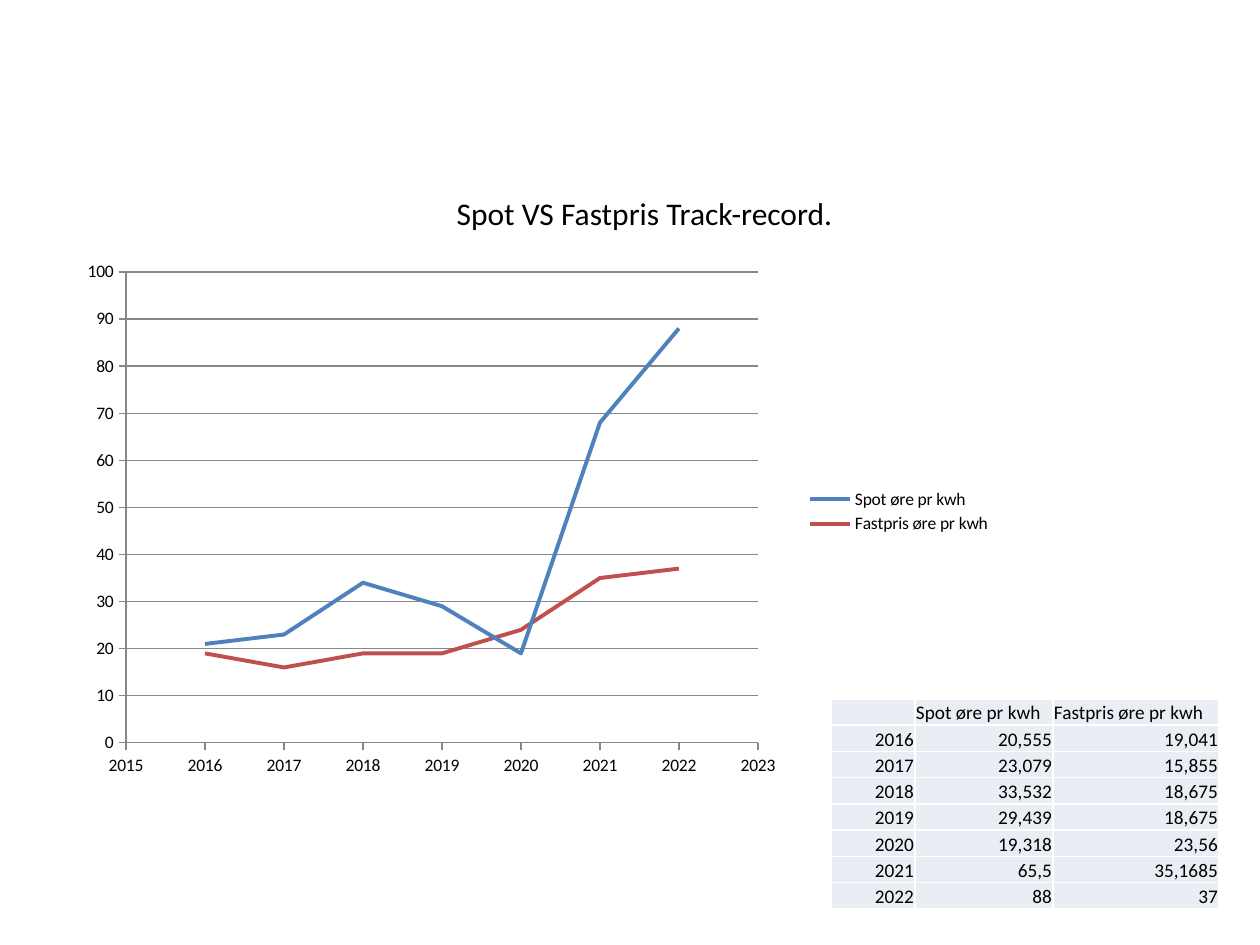
import pptx
import pptx.chart.data
import pptx.dml.color
import pptx.enum.chart
import pptx.enum.text
import pptx.oxml
import pptx.oxml.ns
import pptx.util

PX = pptx.util.Inches(1) / 126
FONT = "Calibri"
BLACK, WHITE, GRID, CELL = "000000", "FFFFFF", "878787", "E9EDF4"
LEFT = pptx.enum.text.PP_ALIGN.LEFT
RIGHT = pptx.enum.text.PP_ALIGN.RIGHT
CENTER = pptx.enum.text.PP_ALIGN.CENTER

HEADINGS = ["", "Spot øre pr kwh", "Fastpris øre pr kwh"]
PRICES = [
    ["2016", "20,555", "19,041"],
    ["2017", "23,079", "15,855"],
    ["2018", "33,532", "18,675"],
    ["2019", "29,439", "18,675"],
    ["2020", "19,318", "23,56"],
    ["2021", "65,5", "35,1685"],
    ["2022", "88", "37"],
]
YEARS = range(2016, 2023)
SERIES = [
    (HEADINGS[1], "4F81BD", [21, 23, 34, 29, 19, 68, 88]),
    (HEADINGS[2], "C0504D", [19, 16, 19, 19, 24, 35, 37]),
]


def px(length):
    return pptx.util.Emu(round(length * PX))


def color(code):
    return pptx.dml.color.RGBColor.from_string(code)


def set_font(font, size, code=BLACK):
    font.name = FONT
    font.size = pptx.util.Pt(size)
    font.color.rgb = color(code)


def set_line(line, code, width):
    line.color.rgb = color(code)
    line.width = pptx.util.Pt(width)


def write_text(frame, text, size=11, align=LEFT):
    para = frame.paragraphs[0]
    para.alignment = align
    if text:
        span = para.add_run()
        span.text = text
        set_font(span.font, size)
    else:
        # An empty paragraph takes its height from its end mark
        para._p.append(pptx.oxml.parse_xml(
            f'<a:endParaRPr {pptx.oxml.ns.nsdecls("a")} sz="{size * 100}"/>'
        ))


def add_title(page, left, top, width, height):
    box = page.shapes.add_textbox(px(left), px(top), px(width), px(height))
    frame = box.text_frame
    frame.word_wrap = True
    frame.vertical_anchor = pptx.enum.text.MSO_ANCHOR.MIDDLE
    # The wider left inset sets the title slightly right of centre
    frame.margin_left, frame.margin_right = px(27), px(12)
    write_text(frame, "Spot VS Fastpris Track-record.", size=18, align=CENTER)


def set_plot_area(chart, **fractions):
    settings = {"layoutTarget": "inner", "xMode": "edge", "yMode": "edge", **fractions}
    entries = "".join(f'<c:{key} val="{value}"/>' for key, value in settings.items())
    layout = pptx.oxml.parse_xml(
        f'<c:layout {pptx.oxml.ns.nsdecls("c")}>'
        f"<c:manualLayout>{entries}</c:manualLayout></c:layout>"
    )
    area = chart.element.find(".//" + pptx.oxml.ns.qn("c:plotArea"))
    for old in area.findall(pptx.oxml.ns.qn("c:layout")):
        area.remove(old)
    area.insert(0, layout)


def set_axis(axis, low, high, step, gridlines):
    axis.minimum_scale, axis.maximum_scale = low, high
    axis.major_unit = step
    axis.has_major_gridlines = gridlines
    axis.major_tick_mark = pptx.enum.chart.XL_TICK_MARK.OUTSIDE
    axis.minor_tick_mark = pptx.enum.chart.XL_TICK_MARK.NONE
    axis.tick_labels.number_format = "General"
    axis.tick_labels.number_format_is_linked = False
    set_line(axis.format.line, GRID, 0.75)
    if gridlines:
        set_line(axis.major_gridlines.format.line, GRID, 0.75)


def add_price_chart(page, left, top, width, height):
    data = pptx.chart.data.XyChartData()
    for name, _, values in SERIES:
        series = data.add_series(name)
        for year, value in zip(YEARS, values):
            series.add_data_point(year, value)
    chart = page.shapes.add_chart(
        pptx.enum.chart.XL_CHART_TYPE.XY_SCATTER_LINES_NO_MARKERS,
        px(left), px(top), px(width), px(height), data,
    ).chart
    chart.has_title = False
    set_font(chart.font, 10)
    chart.has_legend = True
    chart.legend.position = pptx.enum.chart.XL_LEGEND_POSITION.RIGHT
    chart.legend.include_in_layout = False
    chart.plots[0].vary_by_categories = False
    set_axis(chart.category_axis, 2015, 2023, 1, gridlines=False)
    set_axis(chart.value_axis, 0, 100, 10, gridlines=True)
    for series, (_, code, _) in zip(chart.plots[0].series, SERIES):
        series.smooth = False
        series.marker.style = pptx.enum.chart.XL_MARKER_STYLE.NONE
        set_line(series.format.line, code, 2.25)
    set_plot_area(chart, x=45 / width, y=28 / height, w=632 / width, h=471 / height)


def format_cell(cell):
    cell.margin_left = cell.margin_right = cell.margin_top = px(1)
    cell.margin_bottom = 0
    cell.vertical_anchor = pptx.enum.text.MSO_ANCHOR.BOTTOM
    properties = cell._tc.get_or_add_tcPr()
    for side in ("lnL", "lnR", "lnT", "lnB"):
        properties.append(pptx.oxml.parse_xml(
            f'<a:{side} {pptx.oxml.ns.nsdecls("a")} w="{pptx.util.Pt(1)}">'
            f'<a:solidFill><a:srgbClr val="{WHITE}"/></a:solidFill></a:{side}>'
        ))
    cell.fill.solid()
    cell.fill.fore_color.rgb = color(CELL)


def add_price_table(page, left, top, widths, height):
    rows = [HEADINGS] + PRICES
    table = page.shapes.add_table(
        len(rows), len(widths), px(left), px(top), px(sum(widths)), px(height),
    ).table
    table.first_row = table.horz_banding = False
    for column, width in zip(table.columns, widths):
        column.width = px(width)
    for r, texts in enumerate(rows):
        for c, text in enumerate(texts):
            cell = table.cell(r, c)
            format_cell(cell)
            write_text(cell.text_frame, text, align=RIGHT if r else LEFT)


def main():
    deck = pptx.Presentation()
    deck.slide_width, deck.slide_height = px(1260), px(945)
    page = deck.slides.add_slide(deck.slide_layouts[6])
    add_title(page, 54, 167, 1166, 92)
    add_price_chart(page, 81, 244, 923, 535)
    add_price_table(page, 831, 699, widths=[84, 138, 166], height=210)
    deck.save("out.pptx")


if __name__ == "__main__":
    main()
